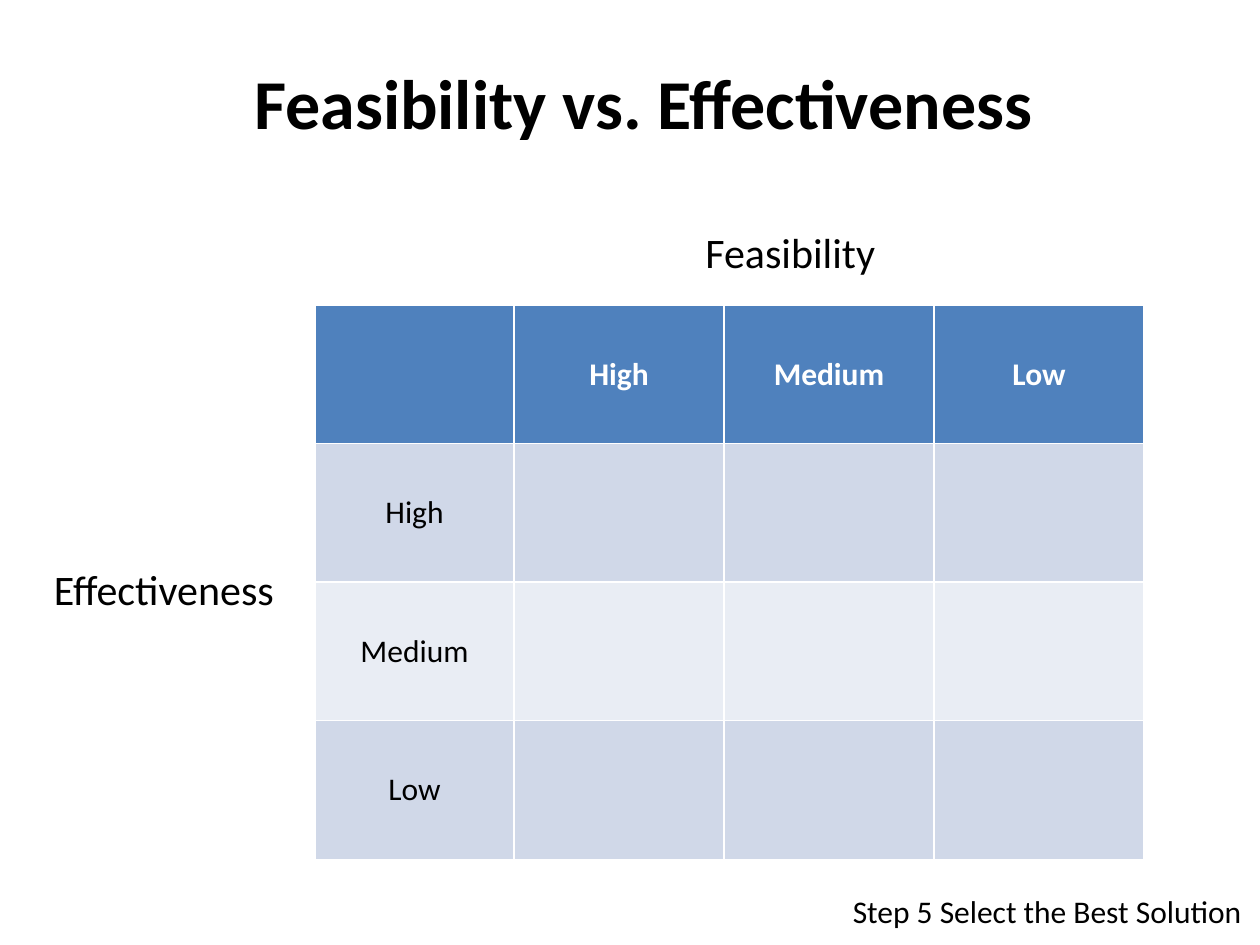
from pptx import Presentation
from pptx.dml.color import RGBColor
from pptx.enum.text import MSO_ANCHOR, MSO_AUTO_SIZE, PP_ALIGN
from pptx.util import Inches, Pt

FONT = "Calibri"
BLACK = RGBColor(0x00, 0x00, 0x00)
WHITE = RGBColor(0xFF, 0xFF, 0xFF)
HEADER_BLUE = RGBColor(0x4F, 0x81, 0xBD)
BANDS = (RGBColor(0xE9, 0xED, 0xF4), RGBColor(0xD0, 0xD8, 0xE8))
LEVELS = ("High", "Medium", "Low")


def add_text(paragraph, text, size, color=BLACK, bold=False):
    run = paragraph.add_run()
    run.text = text
    run.font.name = FONT
    run.font.size = Pt(size)
    run.font.bold = bold
    run.font.color.rgb = color


def place_title(slide, left, top, width, height):
    title = slide.shapes.title
    title.left, title.top = Inches(left), Inches(top)
    title.width, title.height = Inches(width), Inches(height)
    frame = title.text_frame
    frame.word_wrap = False
    frame.vertical_anchor = MSO_ANCHOR.TOP
    heading = frame.paragraphs[0]
    heading.alignment = PP_ALIGN.LEFT
    add_text(heading, "Feasibility vs. Effectiveness", 40, bold=True)


def place_label(slide, text, size, left, top, width, height):
    label = slide.shapes.add_textbox(
        Inches(left), Inches(top), Inches(width), Inches(height))
    frame = label.text_frame
    frame.word_wrap = False
    frame.auto_size = MSO_AUTO_SIZE.SHAPE_TO_FIT_TEXT
    add_text(frame.paragraphs[0], text, size)


def place_matrix(slide, left, top, width, height, first_column):
    """Add the grid of levels; the table style draws its white rules."""
    count = len(LEVELS) + 1
    matrix = slide.shapes.add_table(
        count, count, Inches(left), Inches(top),
        Inches(width), Inches(height)).table
    for index, column in enumerate(matrix.columns):
        share = (width - first_column) / len(LEVELS)
        column.width = Inches(share if index else first_column)

    headings = ("",) + LEVELS
    for r in range(count):
        for c in range(count):
            cell = matrix.cell(r, c)
            cell.fill.solid()
            cell.fill.fore_color.rgb = BANDS[r % 2] if r else HEADER_BLUE
            cell.vertical_anchor = MSO_ANCHOR.MIDDLE
            text = headings[r + c] if r == 0 or c == 0 else ""
            if text:
                paragraph = cell.text_frame.paragraphs[0]
                paragraph.alignment = PP_ALIGN.CENTER
                add_text(paragraph, text, 18,
                         color=BLACK if r else WHITE, bold=r == 0)


def main():
    deck = Presentation()
    deck.slide_width, deck.slide_height = Inches(10), Inches(7.5)
    slide = deck.slides.add_slide(deck.slide_layouts.get_by_name("Title Only"))
    place_title(slide, 1.92, 0.42, 6.47, 0.77)
    place_matrix(slide, 2.5, 2.42, 6.58, 4.4, first_column=1.58)
    place_label(slide, "Feasibility", 24, 5.5, 1.75, 1.56, 0.5)
    place_label(slide, "Effectiveness", 24, 0.33, 4.42, 1.98, 0.5)
    place_label(slide, "Step 5 Select the Best Solution", 18,
                6.67, 7.03, 3.33, 0.4)
    deck.save("out.pptx")


if __name__ == "__main__":
    main()
